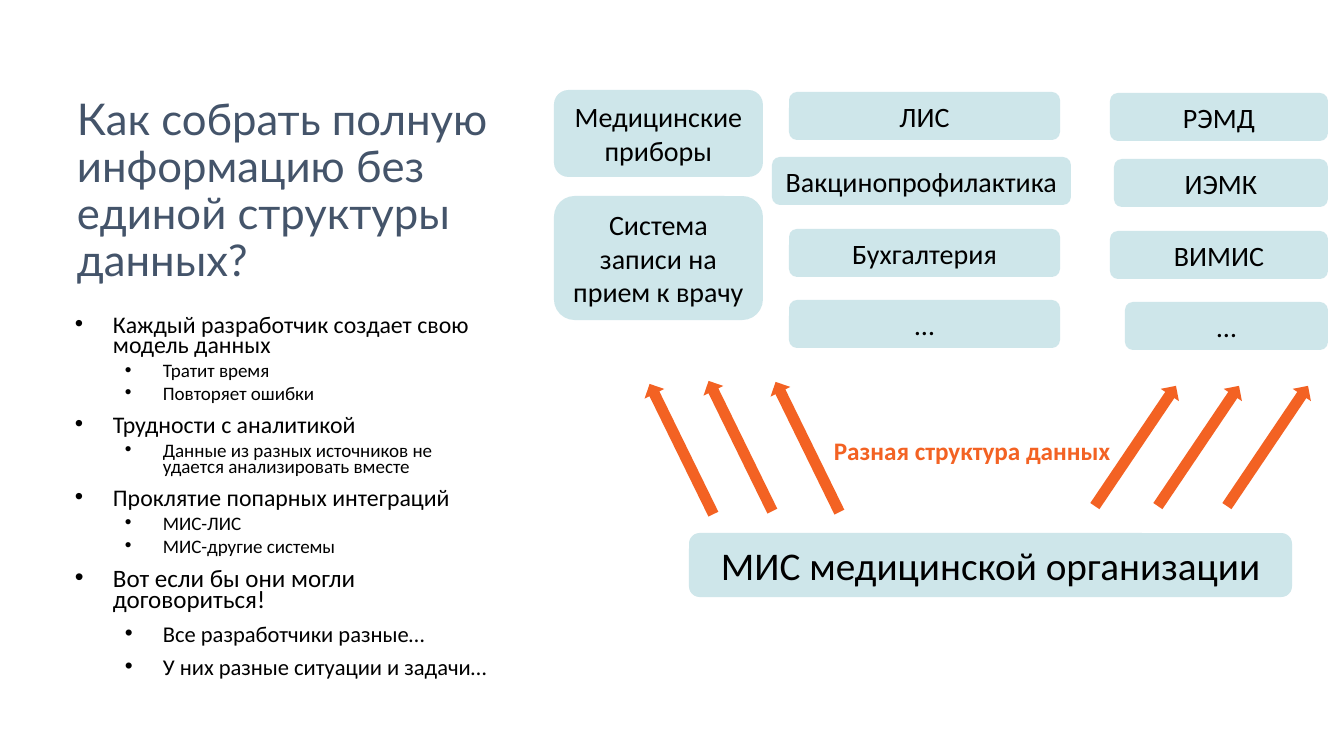
"""Builds a slide on collecting data without a common data structure."""
from lxml import etree
from pptx import Presentation
from pptx import util as u
from pptx.dml.color import RGBColor
from pptx.enum import shapes, text
from pptx.oxml.ns import qn

PX = 914400 / 100.8
BLACK = RGBColor(0x00, 0x00, 0x00)
SLATE = RGBColor(0x44, 0x54, 0x6A)
PALE = RGBColor(0xCE, 0xE6, 0xEA)
ORANGE = RGBColor(0xF3, 0x62, 0x23)

BULLETS = [
    (0, 17, 10, "Каждый разработчик создает свою модель данных"),
    (1, 13.6, 5, "Тратит время"),
    (1, 13.6, 5, "Повторяет ошибки"),
    (0, 17, 10, "Трудности с аналитикой"),
    (1, 13.6, 5, "Данные из разных источников не удается анализировать вместе"),
    (0, 17, 10, "Проклятие попарных интеграций"),
    (1, 13.6, 5, "МИС-ЛИС"),
    (1, 13.6, 5, "МИС-другие системы"),
    (0, 17.9, 10, "Вот если бы они могли договориться!"),
    (1, 16.1, 10, "Все разработчики разные…"),
    (1, 16.1, 10, "У них разные ситуации и задачи…"),
]
SYSTEMS = [
    (554, 90, 209, 87, "Медицинские приборы"),
    (554, 196, 209, 124, "Система записи на прием к врачу"),
    (789, 92, 271, 48, "ЛИС"),
    (772, 157, 299, 48, "Вакцинопрофилактика"),
    (789, 229, 271, 48, "Бухгалтерия"),
    (789, 300, 271, 48, "…"),
    (1110, 93, 218, 48, "РЭМД"),
    (1114, 159, 214, 48, "ИЭМК"),
    (1110, 231, 218, 48, "ВИМИС"),
    (1125, 302, 203, 48, "…"),
]
ARROWS = [
    (1063, 435, 304), (1126, 435, 304), (1195, 435, 304),
    (668, 435, 243.9), (609, 438, 243.9), (735, 436, 243.9),
]


def px(*values):
    """Turn pixel lengths into EMU."""
    return [u.Emu(round(v * PX)) for v in values]


def write(p, words, size=20, color=BLACK, font="Calibri", bold=False,
          align=None, spacing=None, before=None):
    """Put formatted text into a paragraph."""
    if align is not None:
        p.alignment = align
    if spacing is not None:
        p.line_spacing = spacing
    if before is not None:
        p.space_before = u.Pt(before)
    r = p.add_run()
    r.text = words
    r.font.name = font
    r.font.size = u.Pt(size)
    r.font.bold = bold
    r.font.color.rgb = color


def add_text_box(slide, box, wrap=True, anchor=text.MSO_ANCHOR.TOP):
    """Add an empty text box and return its text frame."""
    tf = slide.shapes.add_textbox(*px(*box)).text_frame
    tf.word_wrap = wrap
    tf.vertical_anchor = anchor
    return tf


def add_filled(slide, kind, box, color):
    """Add a plain filled shape without line or shadow."""
    sp = slide.shapes.add_shape(kind, *px(*box))
    sp.shadow.inherit = False
    sp.fill.solid()
    sp.fill.fore_color.rgb = color
    sp.line.fill.background()
    return sp


def add_system(slide, box, words, size=20):
    """Add a rounded box naming a system."""
    sp = add_filled(slide, shapes.MSO_SHAPE.ROUNDED_RECTANGLE, box, PALE)
    tf = sp.text_frame
    tf.word_wrap = True
    tf.vertical_anchor = text.MSO_ANCHOR.MIDDLE
    write(tf.paragraphs[0], words, size=size, align=text.PP_ALIGN.CENTER)


def add_arrow(slide, left, top, angle):
    """Add a rotated block arrow."""
    box = (left, top, 145, 22)
    sp = add_filled(slide, shapes.MSO_SHAPE.RIGHT_ARROW, box, ORANGE)
    sp.rotation = angle


def add_bullets(slide, box, items):
    """Add a bulleted list with two levels."""
    tf = add_text_box(slide, box)
    for i, (level, size, before, words) in enumerate(items):
        p = tf.add_paragraph() if i else tf.paragraphs[0]
        p.level = level
        pPr = p._p.get_or_add_pPr()
        margin, hang = px(38 + 50 * level, 38)
        pPr.set("marL", str(margin))
        pPr.set("indent", str(-hang))
        etree.SubElement(pPr, qn("a:buFont")).set("typeface", "Arial")
        etree.SubElement(pPr, qn("a:buChar")).set("char", "•")
        write(p, words, size=size, spacing=0.7, before=before if i else 0)


def main():
    """Build and save the slide."""
    prs = Presentation()
    prs.slide_width, prs.slide_height = px(1344, 756)
    slide = prs.slides.add_slide(prs.slide_layouts[6])

    add_bullets(slide, (65, 313, 438, 410), BULLETS)
    add_system(slide, (689, 533, 603, 64), "МИС медицинской организации", size=28)
    for *box, words in SYSTEMS:
        add_system(slide, box, words)
    for arrow in ARROWS:
        add_arrow(slide, *arrow)

    tf = add_text_box(slide, (824, 430, 299, 40), wrap=False)
    write(tf.paragraphs[0], "Разная структура данных", size=18, color=ORANGE, bold=True)
    tf = add_text_box(slide, (67, 38, 438, 253), anchor=text.MSO_ANCHOR.BOTTOM)
    write(tf.paragraphs[0], "Как собрать полную информацию без единой структуры данных?",
          size=31.2, color=SLATE, font="Lato", spacing=0.9)
    prs.save("out.pptx")


if __name__ == "__main__":
    main()
